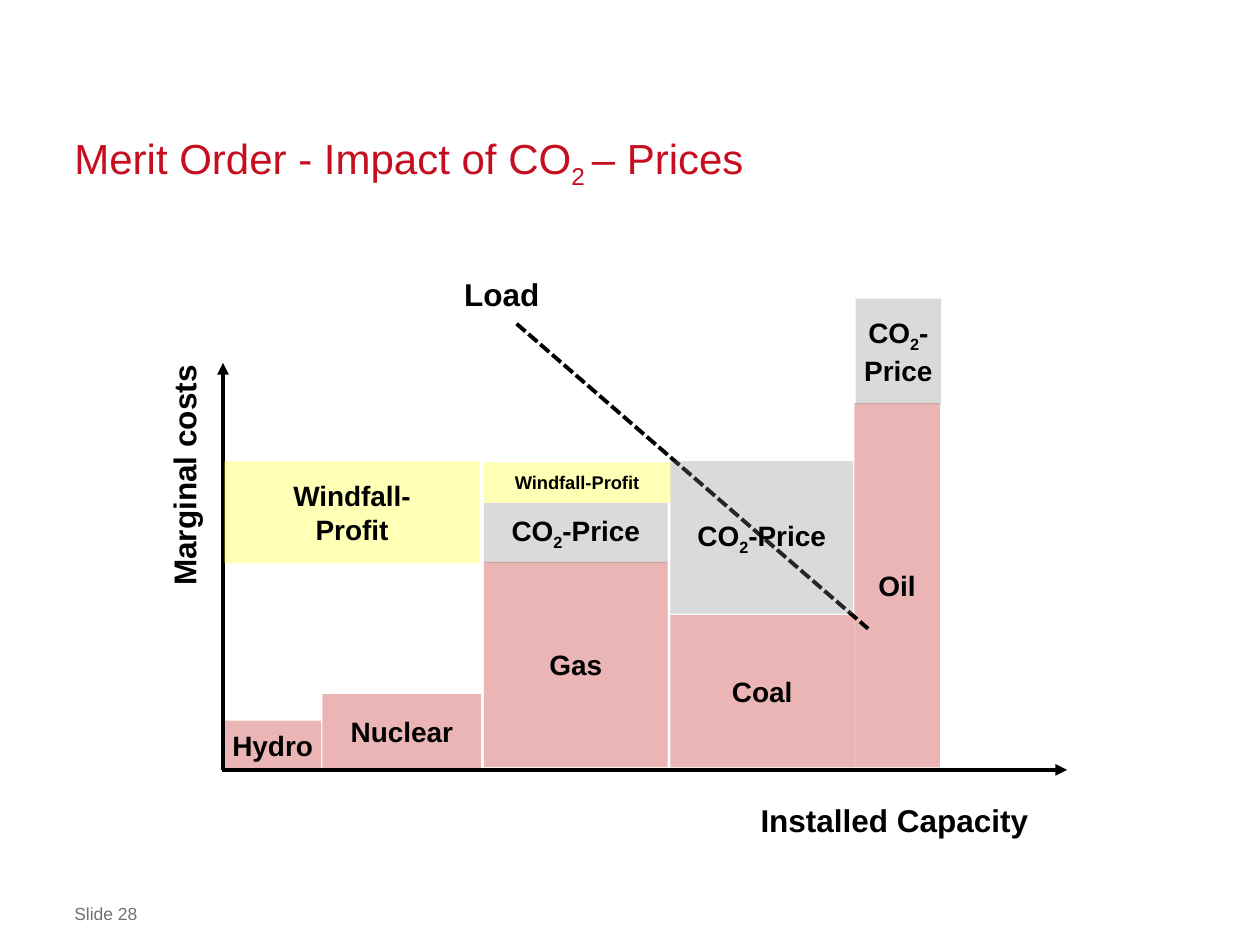
from typing import NamedTuple

from lxml import etree
from pptx import Presentation
from pptx.dml.color import RGBColor
from pptx.enum.dml import MSO_LINE
from pptx.enum.shapes import MSO_CONNECTOR, MSO_SHAPE
from pptx.enum.text import MSO_ANCHOR, MSO_AUTO_SIZE, PP_ALIGN
from pptx.oxml.ns import qn
from pptx.util import Pt

LEFT, CENTER, RIGHT = PP_ALIGN.LEFT, PP_ALIGN.CENTER, PP_ALIGN.RIGHT
TOP, MIDDLE = MSO_ANCHOR.TOP, MSO_ANCHOR.MIDDLE
NO_AUTOFIT = MSO_AUTO_SIZE.NONE
RECTANGLE, STRAIGHT = MSO_SHAPE.RECTANGLE, MSO_CONNECTOR.STRAIGHT
SHORT_DASH = MSO_LINE.SQUARE_DOT

EMU_PER_PX = 9144
FONT = "Arial"
BLACK, TITLE_RED, GREY = "000000", "C50E1F", "717171"
FUEL, CO2, WINDFALL = "C00000", "808080", "FFFF00"
BLOCK_OPACITY = 29
SUBSCRIPT = "_"


class Block(NamedTuple):
    lines: list[str]
    left: int
    top: int
    width: int
    height: int
    fill: str
    size: float = 16


class Label(NamedTuple):
    text: str
    left: int
    top: int
    width: int
    height: int
    align: PP_ALIGN = RIGHT
    size: float = 18
    color: str = BLACK
    bold: bool = True
    rotation: int = 0
    inset: tuple[int, int] = (10, 5)


class Line(NamedTuple):
    start: tuple[int, int]
    end: tuple[int, int]
    arrow: bool = True


FUEL_BLOCKS = [
    Block(["Oil"], 678, 320, 68, 289, FUEL),
    Block(["Coal"], 532, 488, 146, 121, FUEL),
    Block(["Gas"], 384, 446, 146, 163, FUEL),
    Block(["Nuclear"], 256, 551, 126, 59, FUEL),
    Block(["Hydro"], 178, 572, 77, 39, FUEL),
]
PRICE_BLOCKS = [
    Block(["CO_2_-Price"], 532, 366, 145, 121, CO2),
    Block(["CO_2_-Price"], 384, 399, 146, 48, CO2),
    Block(["CO_2_-", "Price"], 679, 237, 68, 84, CO2),
    Block(["Windfall-", "Profit"], 178, 366, 203, 81, WINDFALL),
    Block(["Windfall-Profit"], 384, 367, 148, 32, WINDFALL, 10.5),
]
LABELS = [
    Label("Slide 28", 59, 717, 724, 17, LEFT, 10, GREY, False, inset=(0, 0)),
    Label("Marginal costs", 36, 370, 220, 40, rotation=270),
    Label("Installed Capacity", 585, 631, 241, 40),
    Label("Load", 353, 213, 85, 40),
]
LINES = [
    Line((176, 611), (847, 611)),
    Line((177, 611), (177, 288)),
    Line((410, 257), (689, 499), arrow=False),
]


def px(length: int) -> int:
    return length * EMU_PER_PX


def rgb(color: str) -> RGBColor:
    return RGBColor.from_string(color)


def write_para(para, text: str, size: float, color: str, bold: bool, align: PP_ALIGN) -> None:
    for index, part in enumerate(text.split(SUBSCRIPT)):
        span = para.add_run()
        span.text = part
        if index % 2:
            span._r.get_or_add_rPr().set("baseline", "-25000")
    para.alignment = align
    para.font.name = FONT
    para.font.size = Pt(size)
    para.font.bold = bold
    para.font.color.rgb = rgb(color)


def set_frame(frame, anchor: MSO_ANCHOR, inset: tuple[int, int], wrap: bool) -> None:
    frame.auto_size = NO_AUTOFIT
    frame.word_wrap = wrap
    frame.vertical_anchor = anchor
    frame.margin_left = frame.margin_right = px(inset[0])
    frame.margin_top = frame.margin_bottom = px(inset[1])


def write_title(page) -> None:
    title = page.shapes.title
    title.left, title.top, title.width, title.height = map(px, (59, 109, 882, 81))
    set_frame(title.text_frame, TOP, (0, 0), True)
    para = title.text_frame.paragraphs[0]
    write_para(para, "Merit Order - Impact of CO_2 _– Prices", 24, TITLE_RED, False, LEFT)
    para.line_spacing = Pt(30)


def draw_block(page, block: Block) -> None:
    shape = page.shapes.add_shape(
        RECTANGLE, px(block.left), px(block.top), px(block.width), px(block.height)
    )
    shape.shadow.inherit = False
    shape.line.fill.background()
    shape.fill.solid()
    shape.fill.fore_color.rgb = rgb(block.fill)
    color = shape._element.spPr.find(qn("a:solidFill"))[0]
    etree.SubElement(color, qn("a:alpha")).set("val", str(BLOCK_OPACITY * 1000))
    frame = shape.text_frame
    set_frame(frame, MIDDLE, (10, 5), False)
    for index, text in enumerate(block.lines):
        para = frame.add_paragraph() if index else frame.paragraphs[0]
        write_para(para, text, block.size, BLACK, True, CENTER)


def draw_label(page, label: Label) -> None:
    box = page.shapes.add_textbox(
        px(label.left), px(label.top), px(label.width), px(label.height)
    )
    box.rotation = label.rotation
    set_frame(box.text_frame, TOP, label.inset, True)
    para = box.text_frame.paragraphs[0]
    write_para(para, label.text, label.size, label.color, label.bold, label.align)


def draw_line(page, line: Line) -> None:
    connector = page.shapes.add_connector(
        STRAIGHT, *map(px, line.start), *map(px, line.end)
    )
    connector.line.color.rgb = rgb(BLACK)
    connector.line.width = Pt(2.25)
    if line.arrow:
        outline = connector.line._get_or_add_ln()
        etree.SubElement(outline, qn("a:tailEnd")).set("type", "triangle")
    else:
        connector.line.dash_style = SHORT_DASH
    etree.SubElement(connector._element.spPr, qn("a:effectLst"))


def main() -> None:
    deck = Presentation()
    deck.slide_width, deck.slide_height = px(1000), px(750)
    page = deck.slides.add_slide(deck.slide_layouts[5])
    write_title(page)
    for block in FUEL_BLOCKS:
        draw_block(page, block)
    for label in LABELS:
        draw_label(page, label)
    for line in LINES:
        draw_line(page, line)
    for block in PRICE_BLOCKS:
        draw_block(page, block)
    deck.save("out.pptx")


if __name__ == "__main__":
    main()
